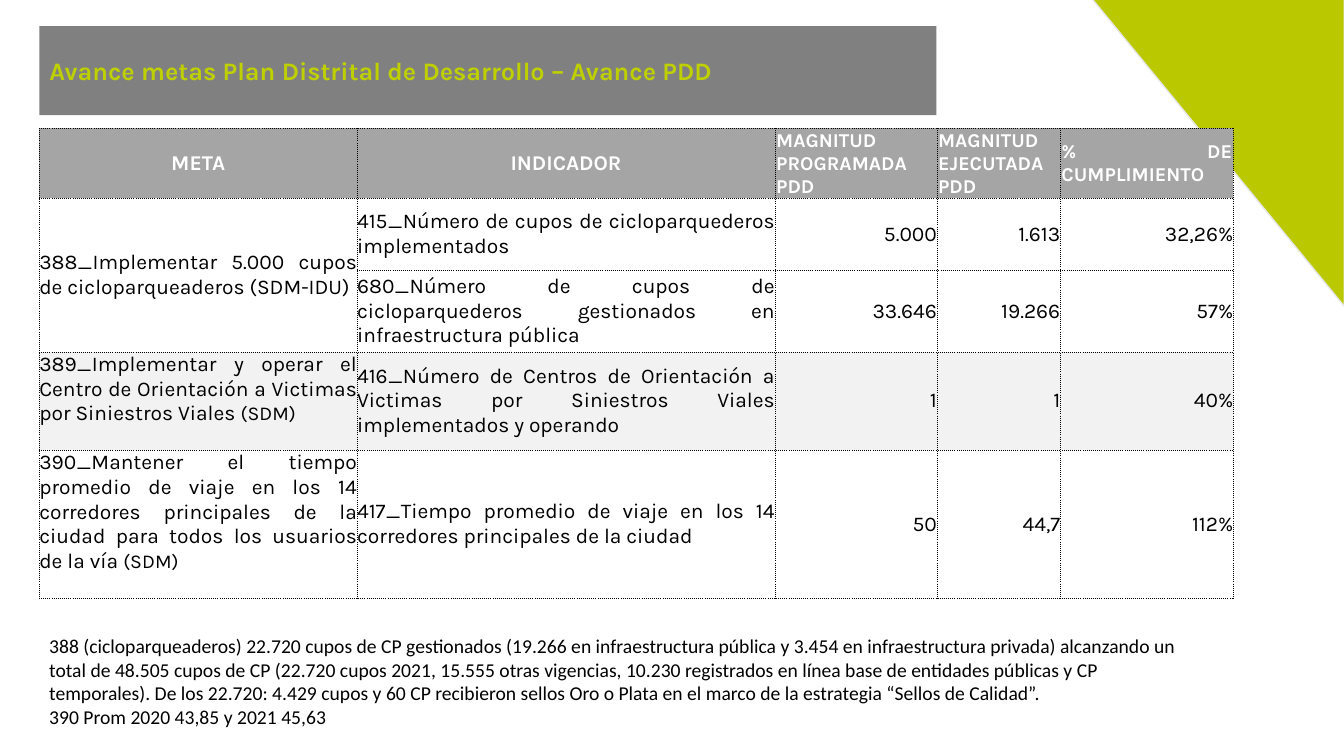
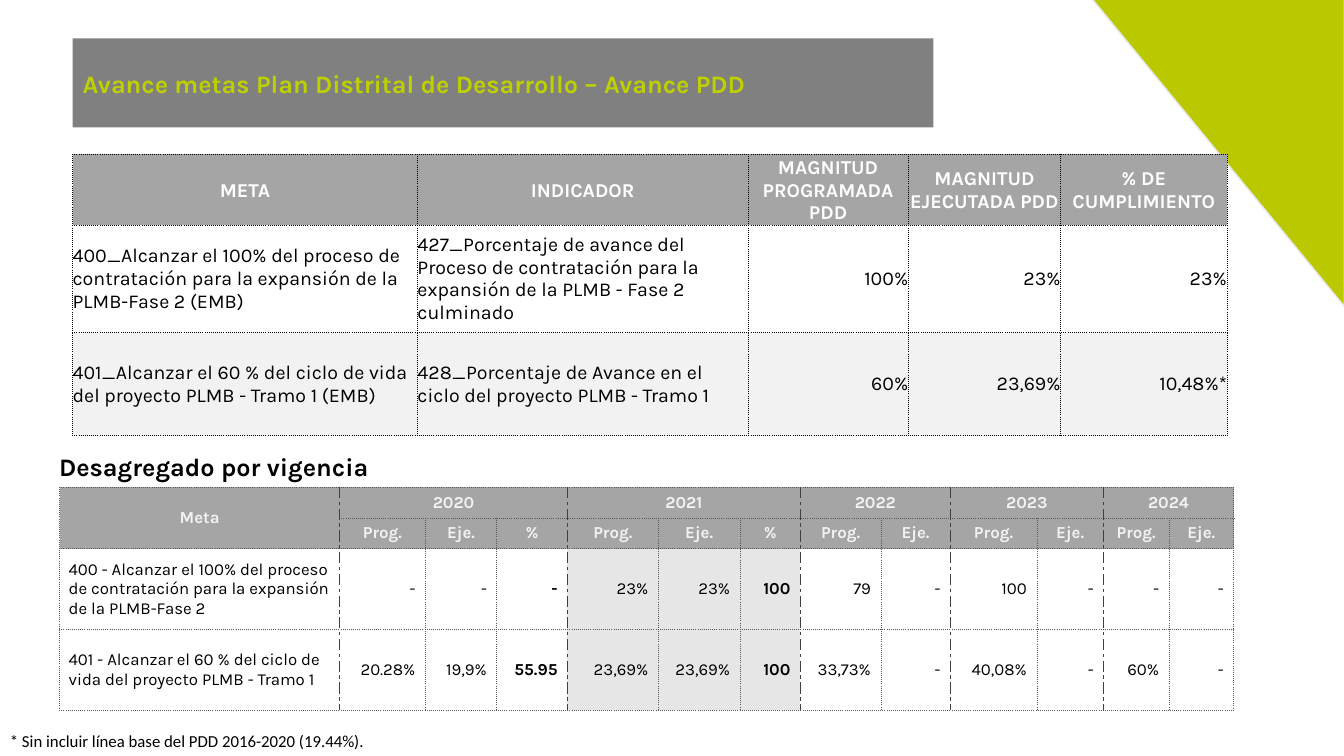
from dataclasses import dataclass, replace

from lxml import etree
from pptx import Presentation, util as u
from pptx.dml.color import RGBColor
from pptx.enum import shapes, text
from pptx.oxml.ns import qn

LEFT, CENTER, RIGHT, JUSTIFY = (
    text.PP_ALIGN.LEFT, text.PP_ALIGN.CENTER, text.PP_ALIGN.RIGHT, text.PP_ALIGN.JUSTIFY)


@dataclass(frozen=True)
class Theme:
    lime: str = "BAC800"
    title_text: str = "BED000"
    band: str = "808080"
    header: str = "A5A5A5"
    stripe: str = "F2F2F2"
    highlight: str = "E7E6E6"
    white: str = "FFFFFF"
    black: str = "000000"
    heading_font: str = "Karla"
    note_font: str = "Calibri"
    title_size: int = 18
    large: int = 15
    medium: int = 14
    small: int = 12


THEME = Theme()


@dataclass(frozen=True)
class Edge:
    color: str
    width: float
    dash: str


BLACK_DOTS = Edge(THEME.black, 0.5, "dot")
GREY_DOTS = Edge("595959", 0.5, "sysDot")
YEAR_DASHES = Edge("404040", 0.75, "sysDashDot")


@dataclass(frozen=True)
class Look:
    """Format of a cell; margins are left, top, right, bottom in cm."""
    size: int
    color: str = THEME.black
    bold: bool = False
    align: int = LEFT
    fill: str = THEME.white
    margins: tuple = (0, 0, 0, 0)


def rgb(color):
    return RGBColor.from_string(color)


def style_font(font, name, size, color, bold=False):
    font.name = name
    font.size = u.Pt(size)
    font.color.rgb = rgb(color)
    font.bold = bold


def place(shape, left, top, width, height):
    shape.left, shape.top, shape.width, shape.height = map(
        u.Cm, (left, top, width, height))


def add_corner(page):
    corner = page.shapes.add_shape(
        shapes.MSO_SHAPE.RIGHT_TRIANGLE,
        u.Cm(27.48), u.Cm(-0.08), u.Cm(6.4), u.Cm(7.8))
    corner.rotation = 180
    corner.shadow.inherit = False
    corner.fill.solid()
    corner.fill.fore_color.rgb = rgb(THEME.lime)
    corner.line.color.rgb = rgb(THEME.highlight)
    corner.line.width = u.Pt(1)


def add_title(page, left, top, width):
    title = page.shapes.title
    place(title, left, top, width, 2.24)
    title.fill.solid()
    title.fill.fore_color.rgb = rgb(THEME.band)
    frame = title.text_frame
    frame.text = "Avance metas Plan Distrital de Desarrollo – Avance PDD"
    frame.auto_size = text.MSO_AUTO_SIZE.NONE
    frame.vertical_anchor = text.MSO_ANCHOR.MIDDLE
    para = frame.paragraphs[0]
    para.alignment = LEFT
    style_font(para.runs[0].font, THEME.heading_font, THEME.title_size,
               THEME.title_text, True)


def add_text(page, content, left, top, width, height, font, size, bold=False):
    box = page.shapes.add_textbox(*map(u.Cm, (left, top, width, height)))
    frame = box.text_frame
    frame.word_wrap = True
    frame.text = content
    for para in frame.paragraphs:
        for span in para.runs:
            style_font(span.font, font, size, THEME.black, bold)


def draw_edge(cell, side, edge):
    line = etree.SubElement(cell._tc.get_or_add_tcPr(), qn(f"a:ln{side}"),
                            w=str(u.Pt(edge.width)))
    fill = etree.SubElement(line, qn("a:solidFill"))
    etree.SubElement(fill, qn("a:srgbClr"), val=edge.color)
    etree.SubElement(line, qn("a:prstDash"), val=edge.dash)


def fill_cell(cell, content, look):
    """Write the content; a (main, ending) pair sets the ending in medium size."""
    cell.fill.solid()
    cell.fill.fore_color.rgb = rgb(look.fill)
    cell.vertical_anchor = text.MSO_ANCHOR.MIDDLE
    (cell.margin_left, cell.margin_top,
     cell.margin_right, cell.margin_bottom) = map(u.Cm, look.margins)
    para = cell.text_frame.paragraphs[0]
    para.alignment = look.align
    pieces = content if isinstance(content, tuple) else (content,)
    for piece, size in zip(pieces, (look.size, THEME.medium)):
        if piece:
            span = para.add_run()
            span.text = piece
            style_font(span.font, THEME.heading_font, size, look.color, look.bold)


def add_grid(page, left, top, widths, heights, rows, look_at, edge,
             merges=(), year_starts=()):
    """Add a table; look_at(row, column) gives the format of each cell."""
    frame = page.shapes.add_table(
        len(heights), len(widths), u.Cm(left), u.Cm(top),
        u.Cm(sum(widths)), u.Cm(sum(heights)))
    table = frame.table
    for column, width in zip(table.columns, widths):
        column.width = u.Cm(width)
    for row, height in zip(table.rows, heights):
        row.height = u.Cm(height)
    for first_row, first_col, last_row, last_col in merges:
        table.cell(first_row, first_col).merge(table.cell(last_row, last_col))
    for i, contents in enumerate(rows):
        for j, content in enumerate(contents):
            cell = table.cell(i, j)
            span = cell.span_width if cell.is_merge_origin else 1
            for side, position in (("L", j), ("R", j + span)):
                draw_edge(cell, side, YEAR_DASHES if position in year_starts else edge)
            for side in "TB":
                draw_edge(cell, side, edge)
            fill_cell(cell, content, look_at(i, j))


GOAL_HEADERS = ["META", "INDICADOR", "MAGNITUD PROGRAMADA PDD",
                "MAGNITUD EJECUTADA PDD", "% DE CUMPLIMIENTO"]
HEADER_LOOK = Look(THEME.medium, THEME.white, True, CENTER, THEME.header,
                   (0.03, 0.03, 0.03, 0))


def mobility_look(row, col):
    if row == 0:
        if col < 2:
            return replace(HEADER_LOOK, size=THEME.large)
        return replace(HEADER_LOOK, align=JUSTIFY)
    return Look(THEME.large,
                align=JUSTIFY if col < 2 else RIGHT,
                fill=THEME.stripe if row == 3 else THEME.white,
                margins=(0, 0, 0, 0.6 if row > 2 and col == 0 else 0))


def metro_look(row, col):
    if row == 0:
        return HEADER_LOOK
    return Look(THEME.medium,
                align=LEFT if col < 2 else RIGHT,
                fill=THEME.stripe if row == 2 else THEME.white)


def yearly_look(row, col):
    margins = (0.25, 0.13, 0.25, 0.13)
    if row < 2:
        return Look(THEME.small, THEME.stripe, True, CENTER, THEME.header, margins)
    if col == 0:
        return Look(THEME.small, margins=(0.23, 0.13, 0.13, 0.13))
    return Look(THEME.small, bold=col in (3, 6), align=RIGHT, margins=margins,
                fill=THEME.highlight if 4 <= col <= 6 else THEME.white)


def build_mobility_page(page):
    add_corner(page)
    add_title(page, 0.99, 0.66, 22.61)
    rows = [
        GOAL_HEADERS,
        ["388_Implementar 5.000 cupos de cicloparqueaderos (SDM-IDU)",
         "415_Número de cupos de cicloparquederos implementados",
         "5.000", "1.613", "32,26%"],
        ["", "680_Número de cupos de cicloparquederos gestionados en "
         "infraestructura pública", "33.646", "19.266", "57%"],
        [("389_Implementar y operar el Centro de Orientación a Victimas por "
          "Siniestros Viales ", "(SDM)"),
         "416_Número de Centros de Orientación a Victimas por Siniestros Viales "
         "implementados y operando", "1", "1", "40%"],
        [("390_Mantener el tiempo promedio de viaje en los 14 corredores "
          "principales de la ciudad para todos los usuarios de la vía ", "(SDM)"),
         "417_Tiempo promedio de viaje en los 14 corredores principales de la ciudad",
         "50", "44,7", "112%"],
    ]
    add_grid(page, 0.99, 3.23, [8.01, 10.53, 4.08, 3.11, 4.36],
             [1.76, 1.82, 2.06, 2.45, 3.74], rows, mobility_look, BLACK_DOTS,
             merges=[(1, 0, 2, 0)])
    note = (
        "388 (cicloparqueaderos) 22.720 cupos de CP gestionados (19.266 en "
        "infraestructura pública y 3.454 en infraestructura privada) alcanzando un "
        "total de 48.505 cupos de CP (22.720 cupos 2021, 15.555 otras vigencias, "
        "10.230 registrados en línea base de entidades públicas y CP temporales). "
        "De los 22.720: 4.429 cupos y 60 CP recibieron sellos Oro o Plata en el "
        "marco de la estrategia “Sellos de Calidad”.\n"
        "390 Prom 2020 43,85 y 2021 45,63")
    add_text(page, note, 0.99, 15.85, 29.57, 2.64, THEME.note_font, THEME.medium)


def build_metro_page(page):
    add_corner(page)
    add_title(page, 1.83, 0.97, 21.69)
    goals = [
        GOAL_HEADERS,
        ["400_Alcanzar el 100% del proceso de contratación para la expansión de la "
         "PLMB-Fase 2 (EMB)",
         "427_Porcentaje de avance del Proceso de contratación para la expansión de "
         "la PLMB - Fase 2 culminado", "100%", "23%", "23%"],
        ["401_Alcanzar el 60 % del ciclo de vida del proyecto PLMB - Tramo 1 (EMB)",
         "428_Porcentaje de Avance en el ciclo del proyecto PLMB - Tramo 1",
         "60%", "23,69%", "10,48%*"],
    ]
    add_grid(page, 1.83, 3.89, [8.69, 8.33, 4.04, 3.84, 4.19], [1.79, 2.7, 2.6],
             goals, metro_look, BLACK_DOTS)
    add_text(page, "Desagregado por vigencia", 1.24, 11.25, 12.7, 1.02,
             THEME.heading_font, THEME.title_size, True)

    years, measures, merges, starts = ["Meta"], [""], [(0, 0, 1, 0)], []
    for year, count in (("2020", 3), ("2021", 3), ("2022", 2), ("2023", 2), ("2024", 2)):
        start = len(years)
        starts.append(start)
        merges.append((0, start, 0, start + count - 1))
        years += [year] + [""] * (count - 1)
        measures += ["Prog.", "Eje.", "%"][:count]
    yearly = [
        years, measures,
        ["400 - Alcanzar el 100% del proceso de contratación para la expansión de la "
         "PLMB-Fase 2", "-", "-", "-", "23%", "23%", "100",
         "79", "-", "100", "-", "-", "-"],
        ["401 - Alcanzar el 60 % del ciclo de vida del proyecto PLMB - Tramo 1",
         "20.28%", "19,9%", "55.95", "23,69%", "23,69%", "100",
         "33,73%", "-", "40,08%", "-", "60%", "-"],
    ]
    widths = [7.06, 2.16, 1.8, 1.78, 2.29, 2.06, 1.52, 2.03, 1.75, 2.18, 1.68, 1.65, 1.63]
    add_grid(page, 1.5, 12.28, widths, [0.76, 0.78, 2.03, 2.03], yearly,
             yearly_look, GREY_DOTS, merges, starts)
    add_text(page, "* Sin incluir línea base del PDD 2016-2020 (19.44%).",
             0, 18.29, 12.98, 0.76, THEME.note_font, THEME.small)


def main():
    deck = Presentation()
    deck.slide_width, deck.slide_height = u.Cm(33.87), u.Cm(19.05)
    title_only = deck.slide_layouts[5]
    for build in (build_mobility_page, build_metro_page):
        build(deck.slides.add_slide(title_only))
    deck.save("out.pptx")


if __name__ == "__main__":
    main()
